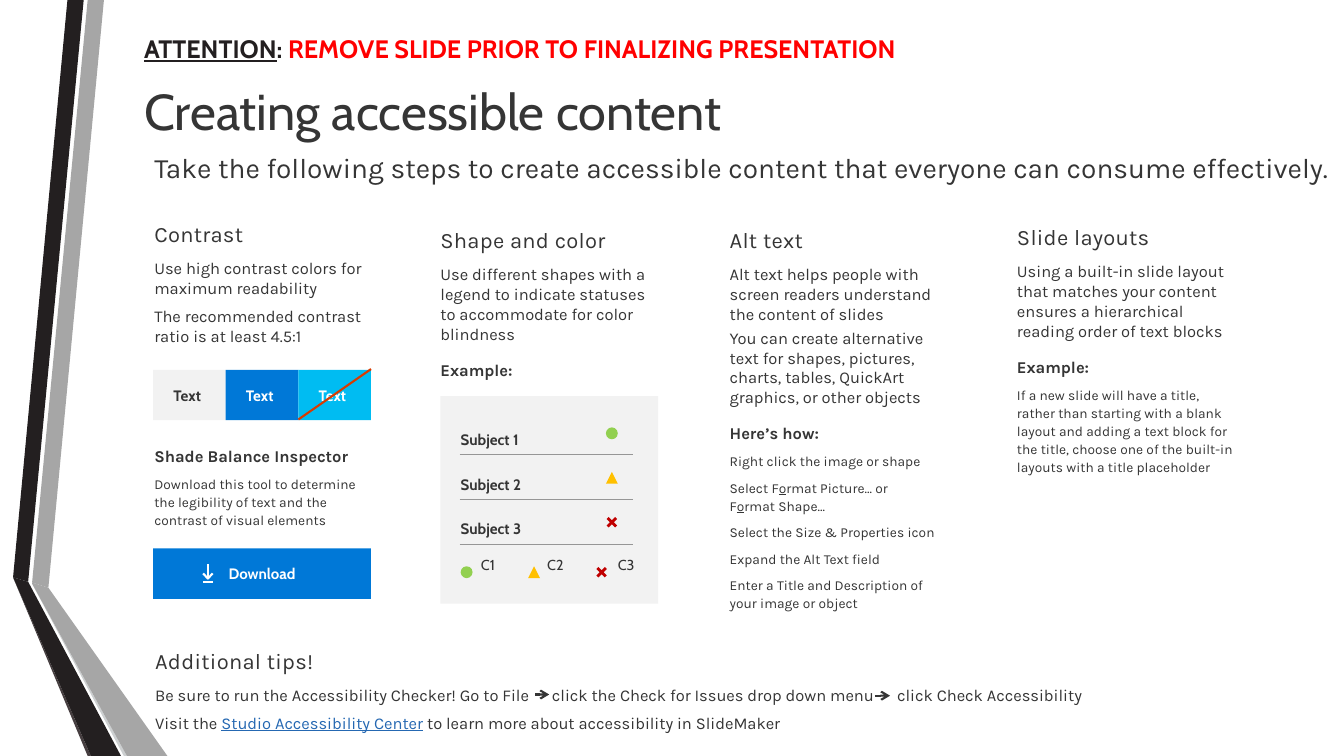
from lxml import etree
from pptx import Presentation
from pptx import util as u
from pptx.dml.color import RGBColor
from pptx.enum import shapes, text
from pptx.oxml.ns import qn

INK, BLUE, PALE, WHITE = "353535", "0078D7", "F2F2F2", "FFFFFF"
GREEN, AMBER, RED = "92D050", "FFC000", "C00000"
WIDE_INSET, NARROW_INSET = (0.51, 0.41), (0.25, 0.13)
STYLES = {
    "banner": ("Cabin", 18, True, 1, 0),
    "title": ("Cabin", 36, False, 1, 0),
    "subtitle": ("Karla", 20, False, 1, 0),
    "heading": ("Karla", 15.7, False, 1, 20),
    "body": ("Karla", 11.8, False, 1, 0),
    "strong": ("Karla", 11.8, True, 1, 0),
    "note": ("Karla", 9.8, False, 1.1, 0),
    "label": ("Cabin", 10.8, True, 1, 0),
    "subject": ("Cabin", 10.8, True, 2, 0),
    "legend": ("Cabin", 10.3, False, 1, 0),
}


def colour(target, value):
    target.solid()
    target.fore_color.rgb = RGBColor.from_string(value)


def write(shape, paragraphs, ink=INK, inset=WIDE_INSET, anchor=text.MSO_ANCHOR.TOP):
    frame = shape.text_frame
    frame.word_wrap = True
    frame.vertical_anchor = anchor
    frame.margin_left = frame.margin_right = u.Cm(inset[0])
    frame.margin_top = frame.margin_bottom = u.Cm(inset[1])
    for index, (style, before, content) in enumerate(paragraphs):
        name, size, bold, spacing, tracking = STYLES[style]
        paragraph = frame.paragraphs[0] if index == 0 else frame.add_paragraph()
        paragraph.alignment = text.PP_ALIGN.LEFT
        paragraph.line_spacing = spacing
        paragraph.space_before = u.Pt(before)
        for position, piece in enumerate(content.split("|")):
            run = paragraph.add_run()
            run.text = piece
            run.font.name, run.font.size, run.font.bold = name, u.Pt(size), bold
            run.font.underline = position % 2 == 1
            colour(run.font.fill, ink)
            run._r.get_or_add_rPr().set("spc", str(tracking))
    return frame.paragraphs


presentation = Presentation()
presentation.slide_width, presentation.slide_height = u.Cm(33.87), u.Cm(19.05)
slide = presentation.slides.add_slide(presentation.slide_layouts[6])

ribbons = [
    ("A6A6A6", [(81, 1468), (122, 1481), (262, 0), (221, 0)]),
    ("231F20", [(211, 0), (170, 0), (33, 1455), (71, 1466)]),
    ("463E40", [(33, 1455), (221, 1905), (229, 1905)]),
    ("CDD0D1", [(81, 1471), (312, 1905), (320, 1905)]),
    ("A6A6A6", [(81, 1471), (320, 1905), (422, 1905), (122, 1481), (81, 1468)]),
    ("231F20", [(305, 1905), (79, 1481), (71, 1466), (33, 1455), (229, 1905)]),
]
for fill, points in ribbons:
    builder = slide.shapes.build_freeform(*points[0], scale=u.Cm(0.01))
    builder.add_line_segments(points[1:])
    ribbon = builder.convert_to_shape()
    ribbon.shadow.inherit = False
    colour(ribbon.fill, fill)
    ribbon.line.fill.background()

banner = slide.shapes.add_textbox(u.Cm(3.38), u.Cm(0.71), u.Cm(19.71), u.Cm(1.02))
banner_text = "|ATTENTION|: ||REMOVE SLIDE PRIOR TO FINALIZING PRESENTATION"
banner_runs = write(banner, [("banner", 0, banner_text)], "231F20", NARROW_INSET)[0].runs
colour(banner_runs[-1].font.fill, "FF0000")

title = slide.shapes.add_textbox(u.Cm(3.38), u.Cm(1.9), u.Cm(29.21), u.Cm(1.78))
write(title, [("title", 0, "Creating accessible content")], INK, NARROW_INSET)

subtitle = slide.shapes.add_textbox(u.Cm(3.38), u.Cm(3.38), u.Cm(32.77), u.Cm(2.44))
write(subtitle, [("subtitle", 4, "Take the following steps to create accessible content "
                  "that everyone can consume effectively.")])

columns = [
    (3.38, 5.16, [
        ("heading", 0, "Contrast"),
        ("body", 7.8, "Use high contrast colors for maximum readability"),
        ("body", 5.9, "The recommended contrast ratio is at least 4.5:1"),
        ("strong", 71.7, "Shade Balance Inspector"),
        ("note", 5.9, "Download this tool to determine the legibility of text "
         "and the contrast of visual elements"),
    ]),
    (10.59, 5.31, [
        ("heading", 0, "Shape and color"),
        ("body", 7.8, "Use different shapes with a legend to indicate statuses "
         "to accommodate for color blindness"),
        ("strong", 11.8, "Example:"),
    ]),
    (17.88, 5.31, [
        ("heading", 0, "Alt text"),
        ("body", 7.8, "Alt text helps people with screen readers understand "
         "the content of slides"),
        ("body", 2.9, "You can create alternative text for shapes, pictures, "
         "charts, tables, QuickArt graphics, or other objects"),
        ("strong", 11.8, "Here’s how:"),
        ("note", 5.9, "Right click the image or shape"),
        ("note", 5.9, "Select F|o|rmat Picture… or"),
        ("note", 0, "F|o|rmat Shape…"),
        ("note", 5.9, "Select the Size & Properties icon"),
        ("note", 5.9, "Expand the Alt Text field"),
        ("note", 5.9, "Enter a Title and Description of your image or object"),
    ]),
    (25.12, 5.23, [
        ("heading", 0, "Slide layouts"),
        ("body", 7.8, "Using a built-in slide layout that matches your content "
         "ensures a hierarchical reading order of text blocks"),
        ("strong", 11.8, "Example:"),
        ("note", 5.9, "If a new slide will have a title, rather than starting with "
         "a blank layout and adding a text block for the title, choose one of the "
         "built-in layouts with a title placeholder"),
    ]),
]
for left, top, paragraphs in columns:
    column = slide.shapes.add_textbox(u.Cm(left), u.Cm(top), u.Cm(6.5), u.Cm(9.96))
    write(column, paragraphs)

tips = slide.shapes.add_textbox(u.Cm(3.4), u.Cm(15.9), u.Cm(27.48), u.Cm(2.97))
tip_paragraphs = write(tips, [
    ("heading", 0, "Additional tips!"),
    ("body", 7.8, "Be sure to run the Accessibility Checker! Go to File\t"
     "click the Check for Issues drop down menu\tclick Check Accessibility"),
    ("body", 5.9, "Visit the |Studio Accessibility Center| to learn more about "
     "accessibility in SlideMaker"),
])
colour(tip_paragraphs[2].runs[1].font.fill, "2568B2")
tab_list = etree.SubElement(tip_paragraphs[1]._p.get_or_add_pPr(), qn("a:tabLst"))
for stop in (10, 18.7):
    etree.SubElement(tab_list, qn("a:tab"), pos=str(u.Cm(stop)), algn="l")

subjects = [("subject", 0, "Subject 1"), ("subject", 5.9, "Subject 2"), ("subject", 5.9, "Subject 3")]
MIDDLE, TOP = text.MSO_ANCHOR.MIDDLE, text.MSO_ANCHOR.TOP
blocks = [
    (3.86, 9.32, 1.83, 1.27, PALE, INK, MIDDLE, [("label", 0, "Text")]),
    (5.69, 9.32, 1.83, 1.27, BLUE, WHITE, MIDDLE, [("label", 0, "Text")]),
    (7.52, 9.32, 1.83, 1.27, "00BCF2", WHITE, MIDDLE, [("label", 0, "Text")]),
    (3.86, 13.82, 5.49, 1.27, BLUE, WHITE, MIDDLE, [("label", 0, "Download")]),
    (11.1, 9.98, 5.49, 5.23, PALE, INK, TOP, subjects),
]
for left, top, width, height, fill, ink, anchor, paragraphs in blocks:
    block = slide.shapes.add_shape(shapes.MSO_SHAPE.RECTANGLE, u.Cm(left), u.Cm(top), u.Cm(width), u.Cm(height))
    block.shadow.inherit = False
    colour(block.fill, fill)
    block.line.fill.background()
    lines = write(block, paragraphs, ink, WIDE_INSET, anchor)
    if paragraphs[0][2] == "Download":
        lines[0].alignment = text.PP_ALIGN.CENTER

builder = slide.shapes.build_freeform(536, 1445, scale=u.Cm(0.01))
builder.add_line_segments([(524, 1458), (512, 1445)], close=False)
for start, end in [((524, 1458), (524, 1422)), ((512, 1466), (536, 1466))]:
    builder.move_to(*start)
    builder.add_line_segments([end], close=False)
download_icon = builder.convert_to_shape()
download_icon.shadow.inherit = False
download_icon.fill.background()
colour(download_icon.line.fill, WHITE)
download_icon.line.width = u.Pt(1.5)

statuses = [
    ("C1", shapes.MSO_SHAPE.OVAL, GREEN, 11.61, 11.61),
    ("C2", shapes.MSO_SHAPE.ISOSCELES_TRIANGLE, AMBER, 13.31, 13.28),
    ("C3", shapes.MSO_SHAPE.CROSS, RED, 15.01, 15.06),
]
rules = []
for row, (name, kind, fill, marker_left, label_left) in enumerate(statuses):
    label = slide.shapes.add_textbox(u.Cm(label_left), u.Cm(13.79), u.Cm(1.78), u.Cm(1.24))
    write(label, [("legend", 0, name)])
    for left, top in [(15.27, 10.77 + 1.12 * row), (marker_left, 14.27)]:
        marker = slide.shapes.add_shape(kind, u.Cm(left), u.Cm(top), u.Cm(0.3), u.Cm(0.3))
        marker.shadow.inherit = False
        colour(marker.fill, fill)
        marker.line.fill.background()
        if kind == shapes.MSO_SHAPE.CROSS:
            marker.adjustments[0] = 0.38
            marker.rotation = 45
    rule_top = 11.46 + 1.13 * row
    rules.append((11.58, rule_top, 15.95, rule_top, "969696", 0.75, False))

connectors = rules + [
    (9.35, 9.3, 7.52, 10.57, "D83B01", 1.5, False),
    (22.05, 17.53, 22.43, 17.53, INK, 1.5, True),
    (13.49, 17.5, 13.84, 17.5, INK, 1.5, True),
]
for left, top, right, bottom, ink, width, arrow in connectors:
    connector = slide.shapes.add_connector(
        shapes.MSO_CONNECTOR.STRAIGHT, u.Cm(left), u.Cm(top), u.Cm(right), u.Cm(bottom))
    colour(connector.line.fill, ink)
    connector.line.width = u.Pt(width)
    properties = connector._element.spPr
    if arrow:
        etree.SubElement(properties.find(qn("a:ln")), qn("a:tailEnd"), type="arrow")
    etree.SubElement(properties, qn("a:effectLst"))

presentation.save("out.pptx")
